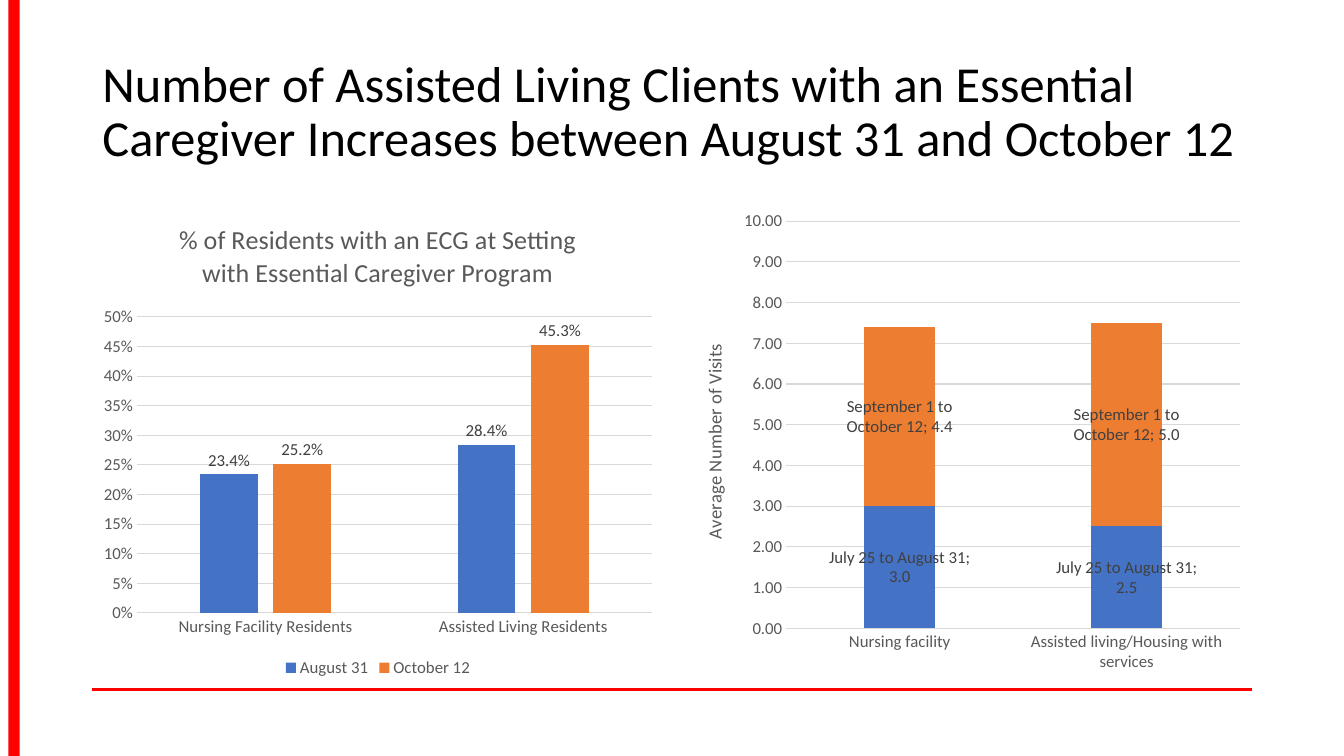
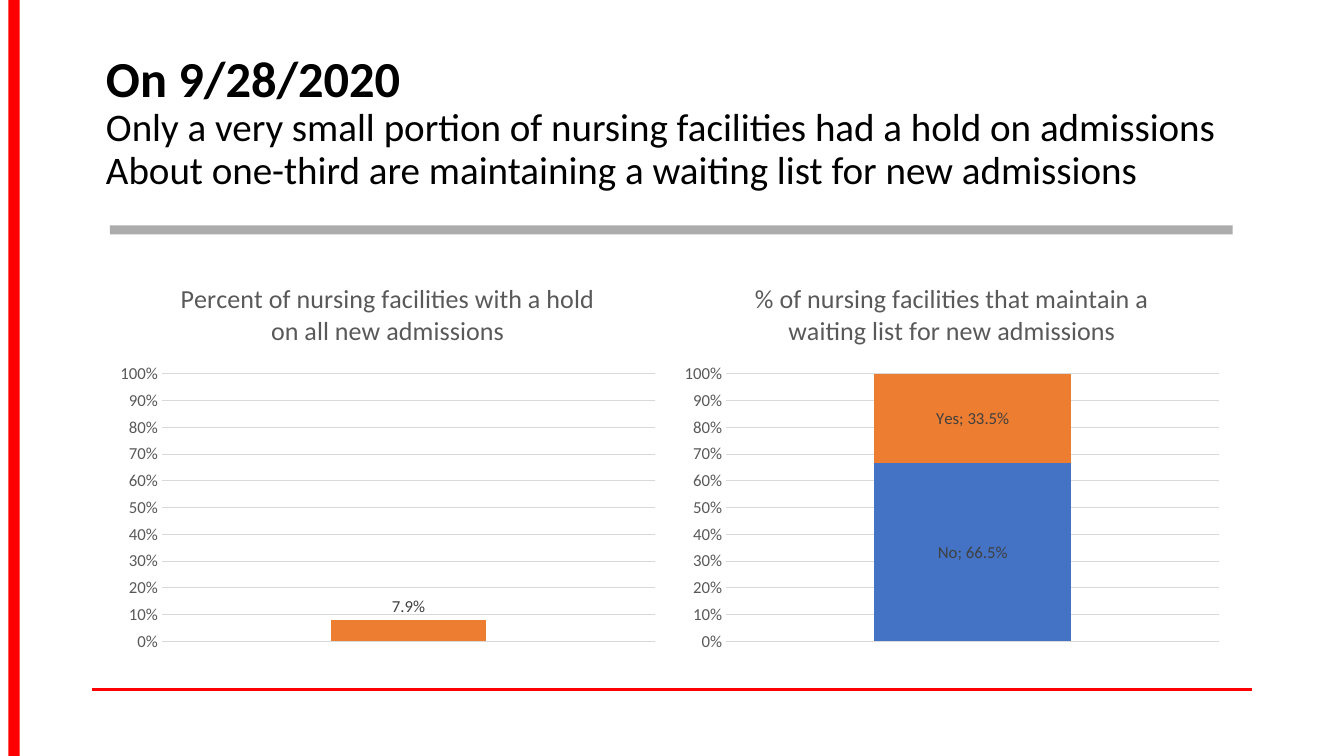
import dataclasses
from typing import Optional

import lxml.etree
import pptx
import pptx.chart.data
import pptx.dml.color
import pptx.enum.chart
import pptx.enum.shapes
import pptx.enum.text
import pptx.oxml.ns
import pptx.util

Pt = pptx.util.Pt
ChartType = pptx.enum.chart.XL_CHART_TYPE
LabelPosition = pptx.enum.chart.XL_LABEL_POSITION
qn = pptx.oxml.ns.qn

FONT = "Calibri"
BLACK = "000000"
RED = "FF0000"
GRAY = "808080"
GRID = "D9D9D9"
AXIS_TEXT = "595959"
LABEL_TEXT = "404040"
BLUE = "4472C4"
ORANGE = "ED7D31"


@dataclasses.dataclass(frozen=True)
class Box:
    left: float
    top: float
    width: float
    height: float

    def points(self) -> tuple:
        return Pt(self.left), Pt(self.top), Pt(self.width), Pt(self.height)


@dataclasses.dataclass(frozen=True)
class Series:
    name: str
    values: tuple
    color: str
    show_name: bool = False


@dataclasses.dataclass(frozen=True)
class ChartSpec:
    kind: ChartType
    box: Box
    categories: tuple
    series: tuple
    maximum: float
    step: float
    title: str = ""
    axis_title: str = ""
    axis_format: str = "0%"
    label_format: str = "0.0%"
    gap: int = 219
    show_categories: bool = True
    show_legend: bool = False


@dataclasses.dataclass(frozen=True)
class TitleLine:
    text: str
    size: float = 36
    bold: bool = False


@dataclasses.dataclass(frozen=True)
class SlideSpec:
    title_box: Box
    title_lines: tuple
    charts: tuple
    divider: Optional[Box] = None


def rgb(color: str) -> pptx.dml.color.RGBColor:
    return pptx.dml.color.RGBColor.from_string(color)


def style_font(font, size: float, color: str) -> None:
    font.name = FONT
    font.size = Pt(size)
    font.bold = False
    font.color.rgb = rgb(color)


def add_bar(slide, box: Box, color: str, opacity: int = 100):
    bar = slide.shapes.add_shape(pptx.enum.shapes.MSO_SHAPE.RECTANGLE, *box.points())
    bar.shadow.inherit = False
    bar.fill.solid()
    bar.fill.fore_color.rgb = rgb(color)
    bar.line.fill.background()
    if opacity < 100:
        fill_color = bar.element.spPr.find(qn("a:solidFill"))[0]
        lxml.etree.SubElement(fill_color, qn("a:alpha")).set("val", str(opacity * 1000))
    return bar


def add_rule(slide, left: float, right: float, y: float):
    rule = slide.shapes.add_connector(
        pptx.enum.shapes.MSO_CONNECTOR.STRAIGHT, Pt(left), Pt(y), Pt(right), Pt(y)
    )
    rule.line.color.rgb = rgb(RED)
    rule.line.width = Pt(2)
    lxml.etree.SubElement(rule.element.spPr, qn("a:effectLst"))
    return rule


def decorate_master(master, slide) -> None:
    """Draw the red rule and edge bar on the slide, then move them to its master."""
    decorations = (add_rule(slide, 66, 894, 492.5), add_bar(slide, Box(6, 0, 8, 540), RED))
    for shape_id, decoration in enumerate(decorations, start=101):
        decoration.element.xpath(".//p:cNvPr")[0].set("id", str(shape_id))
        master.shapes.element.append(decoration.element)


def fill_title(slide, box: Box, lines: tuple) -> None:
    title = slide.shapes.title
    title.left, title.top, title.width, title.height = box.points()
    frame = title.text_frame
    frame.auto_size = pptx.enum.text.MSO_AUTO_SIZE.NONE
    frame.vertical_anchor = pptx.enum.text.MSO_ANCHOR.MIDDLE
    paragraph = frame.paragraphs[0]
    paragraph.alignment = pptx.enum.text.PP_ALIGN.LEFT
    paragraph.line_spacing = 0.9
    style_font(paragraph.font, lines[0].size, BLACK)
    for index, line in enumerate(lines):
        if index:
            paragraph.add_line_break()
        run = paragraph.add_run()
        run.text = line.text
        run.font.size = Pt(line.size)
        run.font.bold = line.bold


def set_heading(owner, text: str, size: float) -> None:
    """Give a chart or an axis its title."""
    owner.has_title = bool(text)
    if text:
        heading = owner.chart_title if hasattr(owner, "chart_title") else owner.axis_title
        heading.text_frame.text = text
        style_font(heading.text_frame.paragraphs[0].font, size, AXIS_TEXT)


def style_axes(chart, spec: ChartSpec) -> None:
    no_ticks = pptx.enum.chart.XL_TICK_MARK.NONE
    for axis in (chart.category_axis, chart.value_axis):
        axis.major_tick_mark = axis.minor_tick_mark = no_ticks
        style_font(axis.tick_labels.font, 12, AXIS_TEXT)
    chart.category_axis.visible = spec.show_categories
    chart.category_axis.format.line.color.rgb = rgb(GRID)
    chart.category_axis.format.line.width = Pt(0.75)

    values = chart.value_axis
    values.minimum_scale = 0
    values.maximum_scale = spec.maximum
    values.major_unit = spec.step
    values.format.line.fill.background()
    values.tick_labels.number_format = spec.axis_format
    values.tick_labels.number_format_is_linked = False
    values.has_major_gridlines = True
    values.major_gridlines.format.line.color.rgb = rgb(GRID)
    values.major_gridlines.format.line.width = Pt(0.75)
    set_heading(values, spec.axis_title, 13.3)


def style_series(chart, spec: ChartSpec) -> None:
    clustered = spec.kind == ChartType.COLUMN_CLUSTERED
    plot = chart.plots[0]
    plot.vary_by_categories = False
    plot.gap_width = spec.gap
    plot.overlap = -27 if clustered else 100
    for drawn, series in zip(plot.series, spec.series):
        drawn.format.fill.solid()
        drawn.format.fill.fore_color.rgb = rgb(series.color)
        drawn.invert_if_negative = False
        labels = drawn.data_labels
        labels.show_value = True
        labels.show_series_name = series.show_name
        labels.number_format = spec.label_format
        labels.number_format_is_linked = False
        labels.position = LabelPosition.OUTSIDE_END if clustered else LabelPosition.CENTER
        style_font(labels.font, 12, LABEL_TEXT)
    for flag in list(chart.element.iter(qn("c:showBubbleSize"))):
        separator = lxml.etree.Element(qn("c:separator"))
        separator.text = "; "
        flag.addnext(separator)


def add_column_chart(slide, spec: ChartSpec) -> None:
    data = pptx.chart.data.CategoryChartData(number_format=spec.label_format)
    data.categories = spec.categories
    for series in spec.series:
        data.add_series(series.name, series.values)
    chart = slide.shapes.add_chart(spec.kind, *spec.box.points(), data).chart
    style_font(chart.font, 12, AXIS_TEXT)
    set_heading(chart, spec.title, 18.6)
    chart.has_legend = spec.show_legend
    if spec.show_legend:
        chart.legend.position = pptx.enum.chart.XL_LEGEND_POSITION.BOTTOM
        chart.legend.include_in_layout = False
        style_font(chart.legend.font, 12, AXIS_TEXT)
    style_axes(chart, spec)
    style_series(chart, spec)


CAREGIVERS = SlideSpec(
    title_box=Box(66, 29, 828, 104),
    title_lines=(
        TitleLine(
            "Number of Assisted Living Clients with an Essential Caregiver "
            "Increases between August 31 and October 12"
        ),
    ),
    charts=(
        ChartSpec(
            ChartType.COLUMN_STACKED,
            Box(486, 144, 408, 343),
            ("Nursing facility", "Assisted living/Housing with services"),
            (
                Series("July 25 to August 31", (3, 2.5), BLUE, show_name=True),
                Series("September 1 to October 12", (4.4, 5), ORANGE, show_name=True),
            ),
            maximum=10,
            step=1,
            axis_title="Average Number of Visits",
            axis_format="#,##0.00",
            label_format="#,##0.0",
        ),
        ChartSpec(
            ChartType.COLUMN_CLUSTERED,
            Box(66, 144, 408, 343),
            ("Nursing Facility Residents", "Assisted Living Residents"),
            (
                Series("August 31", (0.234, 0.284), BLUE),
                Series("October 12", (0.252, 0.453), ORANGE),
            ),
            maximum=0.5,
            step=0.05,
            title="% of Residents with an ECG at Setting with Essential Caregiver Program",
            show_legend=True,
        ),
    ),
)

ADMISSIONS = SlideSpec(
    title_box=Box(68.5, 36, 823, 104),
    title_lines=(
        TitleLine("On 9/28/2020", bold=True),
        TitleLine("Only a very small portion of nursing facilities had a hold on admissions", 27.9),
        TitleLine("About one-third are maintaining a waiting list for new admissions", 27.9),
    ),
    divider=Box(78.5, 161, 802, 6.5),
    charts=(
        ChartSpec(
            ChartType.COLUMN_CLUSTERED,
            Box(78, 187, 398, 284),
            ("1",),
            (Series("Series 1", (0.079,), ORANGE),),
            maximum=1,
            step=0.1,
            title="Percent of nursing facilities with a hold on all new admissions",
            show_categories=False,
        ),
        ChartSpec(
            ChartType.COLUMN_STACKED_100,
            Box(481, 187, 398, 284),
            ("1",),
            (
                Series("No", (0.665,), BLUE, show_name=True),
                Series("Yes", (0.335,), ORANGE, show_name=True),
            ),
            maximum=1,
            step=0.1,
            title="% of nursing facilities that maintain a waiting list for new admissions",
            gap=150,
            show_categories=False,
        ),
    ),
)


def main() -> None:
    deck = pptx.Presentation()
    deck.slide_width, deck.slide_height = Pt(960), Pt(540)
    title_only = deck.slide_layouts.get_by_name("Title Only")
    for index, spec in enumerate((CAREGIVERS, ADMISSIONS)):
        slide = deck.slides.add_slide(title_only)
        if index == 0:
            decorate_master(deck.slide_master, slide)
        fill_title(slide, spec.title_box, spec.title_lines)
        if spec.divider:
            add_bar(slide, spec.divider, GRAY, opacity=65)
        for chart in spec.charts:
            add_column_chart(slide, chart)
    deck.save("out.pptx")


if __name__ == "__main__":
    main()
